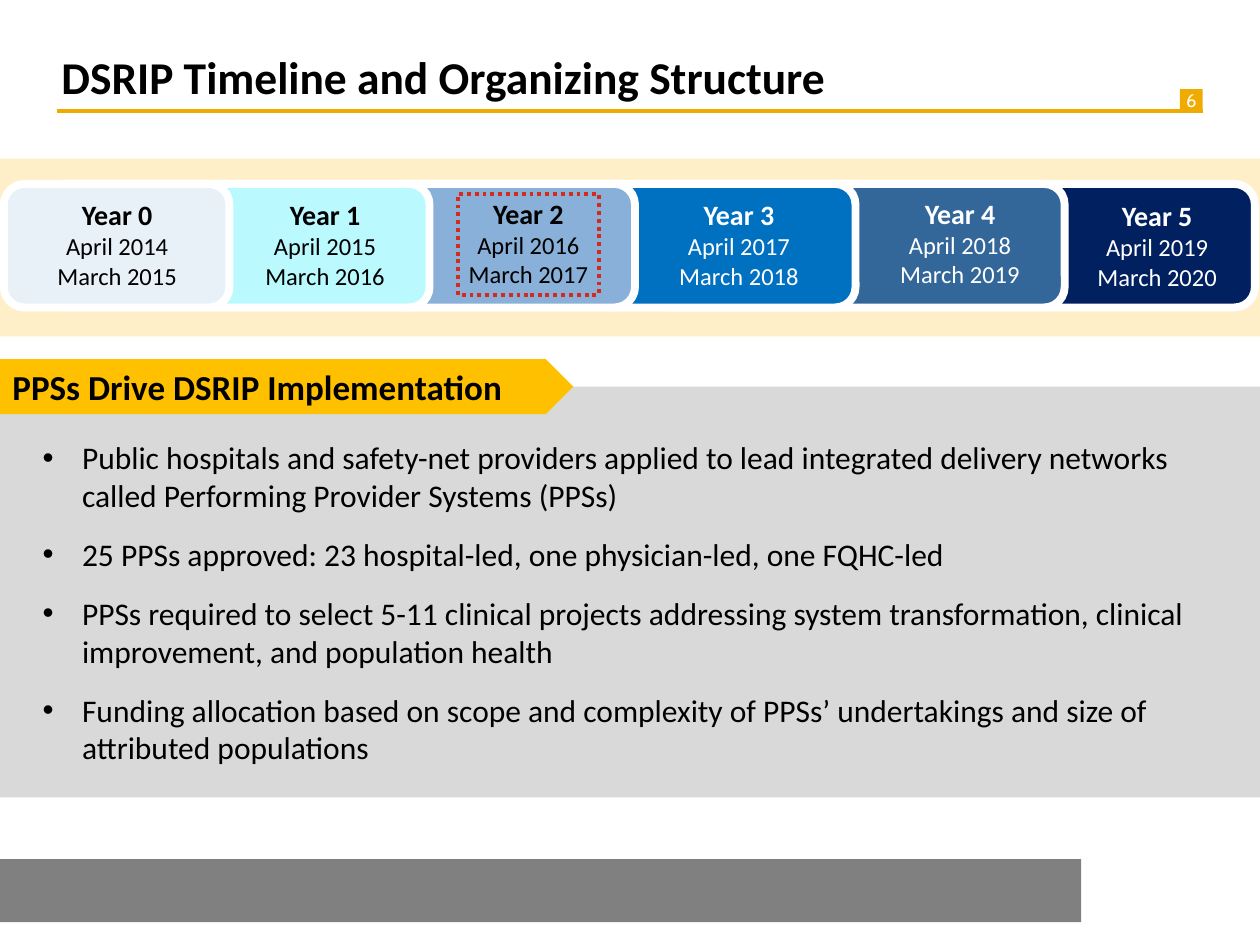
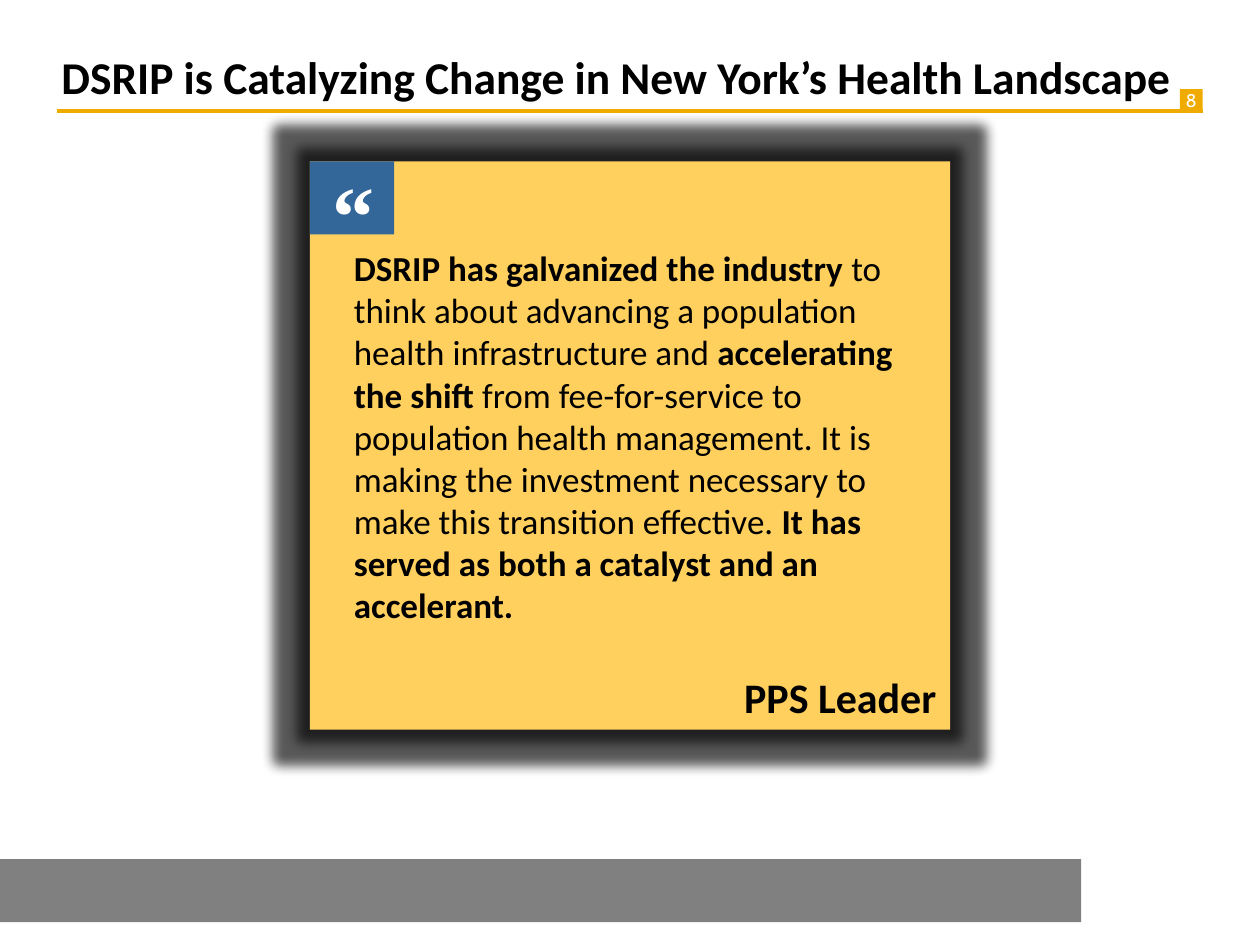
import pptx
import pptx.dml.color
import pptx.enum.dml
import pptx.enum.shapes
import pptx.enum.text
import pptx.oxml
import pptx.oxml.ns
import pptx.util
from lxml import etree

Pt = pptx.util.Pt
SHAPE = pptx.enum.shapes.MSO_SHAPE
ALIGN = pptx.enum.text.PP_ALIGN
ANCHOR = pptx.enum.text.MSO_ANCHOR

BLACK, WHITE = "000000", "FFFFFF"
AMBER, GOLD, CREAM, QUOTE_YELLOW = "F0AB00", "FFC000", "FFEFC9", "FFD05D"
FOOTER_GRAY, PANEL_GRAY, STEEL, RED = "808080", "D9D9D9", "336699", "D52B1E"

BASE = {"name": "Calibri", "bold": False}
TITLE = BASE | {"size": Pt(26), "bold": True}
BODY = BASE | {"size": Pt(18)}
YEAR = BASE | {"size": Pt(16), "bold": True}
MONTH = BASE | {"size": Pt(14)}
HEADING = BASE | {"size": Pt(20), "bold": True}
QUOTE = BASE | {"size": Pt(20)}
SPEAKER = BASE | {"size": Pt(24), "bold": True}
QUOTE_MARK = {"name": "Times New Roman", "size": Pt(48), "bold": True}
PAGE_NUMBER = {"name": "Cabin", "size": Pt(10.5)}

YEARS = [
    (2.2, 128.9, 67, 4.3, "E8F0F8", BLACK),
    (24.5, 221, 185.8, 4.3, "BAFAFF", BLACK),
    (115.2, 247.7, 302, 3.6, "88B0D8", BLACK),
    (218.9, 270, 422.3, 4.3, "0070C0", WHITE),
    (338.4, 270, 548.6, 3.6, STEEL, WHITE),
    (370.8, 346.3, 661.3, 5, "002060", WHITE),
]
BULLETS = [
    "Public hospitals and safety-net providers applied to lead integrated delivery networks called Performing Provider Systems (PPSs)",
    "25 PPSs approved: 23 hospital-led, one physician-led, one FQHC-led",
    "PPSs required to select 5-11 clinical projects addressing system transformation, clinical improvement, and population health",
    "Funding allocation based on scope and complexity of PPSs’ undertakings and size of attributed populations",
]
QUOTE_RUNS = [
    ("DSRIP has galvanized the industry ", True),
    ("to think about advancing a population health infrastructure and ", False),
    ("accelerating the shift ", True),
    ("from fee-for-service to population health management. It is making the investment necessary to make this transition effective. ", False),
    ("It has served as both a catalyst and an accelerant.", True),
]


def color(value):
    return pptx.dml.color.RGBColor.from_string(value)


def set_values(target, values):
    for name, value in values.items():
        setattr(target, name, value)


def add_effects(shape):
    return etree.SubElement(shape._element.spPr, pptx.oxml.ns.qn("a:effectLst"))


def add_box(slide, box, fill=None, line=None, width=0, kind=SHAPE.RECTANGLE):
    shape = slide.shapes.add_shape(kind, *map(Pt, box))
    shape.shadow.inherit = False
    if fill:
        shape.fill.solid()
        shape.fill.fore_color.rgb = color(fill)
    else:
        shape.fill.background()
    if line:
        shape.line.color.rgb = color(line)
        shape.line.width = Pt(width)
    else:
        shape.line.fill.background()
    return shape


def add_run(paragraph, text, font, ink=BLACK):
    run = paragraph.add_run()
    run.text = text
    set_values(run.font, font)
    run.font.color.rgb = color(ink)


def write(shape, lines, ink=BLACK, align=ALIGN.LEFT, **frame_values):
    frame = shape.text_frame
    set_values(frame, {"word_wrap": True, "vertical_anchor": ANCHOR.TOP} | frame_values)
    for index, runs in enumerate(lines):
        paragraph = frame.add_paragraph() if index else frame.paragraphs[0]
        paragraph.alignment = align
        for text, font in runs:
            add_run(paragraph, text, font, ink)
    return frame


def add_text(slide, box, lines, **options):
    return write(slide.shapes.add_textbox(*map(Pt, box)), lines, **options)


def add_page_frame(slide, title, number):
    line = slide.shapes.add_connector(
        pptx.enum.shapes.MSO_CONNECTOR.STRAIGHT, Pt(32.4), Pt(63.4), Pt(687.6), Pt(63.4))
    line.line.color.rgb = color(AMBER)
    line.line.width = Pt(2)
    add_effects(line)
    tab = add_box(slide, (674.2, 51, 13, 13), AMBER)
    write(tab, [[(number, PAGE_NUMBER)]], ink=WHITE, align=ALIGN.CENTER, word_wrap=False,
          vertical_anchor=ANCHOR.MIDDLE, margin_left=0, margin_right=0, margin_top=0, margin_bottom=0)
    add_box(slide, (0, 491, 617.8, 36), FOOTER_GRAY)
    add_text(slide, (28, 23.8, 680, 38.9), [[(title, TITLE)]], vertical_anchor=ANCHOR.BOTTOM)


def add_timeline(slide, box, current):
    left, top, width, height = box
    add_box(slide, box, CREAM)
    card_top, card_height = top + 14.4, 70.6
    for index, (card_left, card_width, center, text_drop, fill, ink) in reversed(list(enumerate(YEARS))):
        add_box(slide, (left + card_left, card_top, card_width, card_height),
                fill, WHITE, 4.5, SHAPE.ROUNDED_RECTANGLE)
        lines = [(f"Year {index}", YEAR), (f"April {2014 + index}", MONTH), (f"March {2015 + index}", MONTH)]
        add_text(slide, (left + center - 50, card_top + text_drop, 100, 60.5),
                 [[line] for line in lines], ink=ink, align=ALIGN.CENTER)
    marker = add_box(slide, (left + YEARS[current][2] - 40.4, card_top + 5.8, 80.6, 57.6), None, RED, 2.25)
    marker.line.dash_style = pptx.enum.dml.MSO_LINE.ROUND_DOT


def add_bullet_panel(slide, box, heading, bullets):
    left, top, width, height = box
    add_box(slide, box, PANEL_GRAY)
    frame = add_text(slide, (left + 17.3, top + 26, width - 35.3, 196.6),
                     [[(bullet, BODY)] for bullet in bullets])
    for index, paragraph in enumerate(frame.paragraphs):
        properties = paragraph._p.get_or_add_pPr()
        set_values(paragraph, {"space_before": Pt(6 if index else 0), "space_after": Pt(6)})
        properties.set("marL", str(Pt(22.5)))
        properties.set("indent", str(-Pt(22.5)))
        for tag, name, value in (("a:buFont", "typeface", "Arial"), ("a:buChar", "char", "•")):
            etree.SubElement(properties, pptx.oxml.ns.qn(tag)).set(name, value)
    banner = add_box(slide, (left, top - 15.8, 327.6, 31.5), GOLD, kind=SHAPE.PENTAGON)
    write(banner, [[(heading, HEADING)]])


def add_glow(shape, radius, fill, opacity):
    effects = shape._element.spPr.find(pptx.oxml.ns.qn("a:effectLst"))
    glow = etree.SubElement(effects, pptx.oxml.ns.qn("a:glow"), rad=str(Pt(radius)))
    tint = etree.SubElement(glow, pptx.oxml.ns.qn("a:srgbClr"), val=fill)
    etree.SubElement(tint, pptx.oxml.ns.qn("a:alpha"), val=str(opacity * 1000))


def add_quote_card(slide, box, quote_runs, speaker):
    left, top, width, height = box
    add_glow(add_box(slide, box, QUOTE_YELLOW), 14, BLACK, 65)
    quote = [(text, QUOTE | {"bold": bold}) for text, bold in quote_runs]
    add_text(slide, (left + 18, top + 45.4, width - 36, 225.4), [quote])
    add_box(slide, (left, top, 48.2, 41.8), STEEL)
    add_text(slide, (left + 5.8, top - 3.6, 36, 65.5), [[("“", QUOTE_MARK)]], ink=WHITE)
    add_text(slide, (left + 43.2, top + height - 36.7, width - 43.9, 36),
             [[(speaker, SPEAKER)]], align=ALIGN.RIGHT)


def main():
    presentation = pptx.Presentation()
    set_values(presentation, {"slide_width": Pt(720), "slide_height": Pt(540)})
    blank = presentation.slide_layouts[6]

    slide = presentation.slides.add_slide(blank)
    add_page_frame(slide, "DSRIP Timeline and Organizing Structure", "6")
    add_timeline(slide, (0, 90.7, 720, 101.5), 2)
    add_bullet_panel(slide, (0, 221, 720, 234.7), "PPSs Drive DSRIP Implementation", BULLETS)

    slide = presentation.slides.add_slide(blank)
    add_page_frame(slide, "DSRIP is Catalyzing Change in New York’s Health Landscape", "8")
    add_quote_card(slide, (177.1, 92.2, 365.8, 324.7), QUOTE_RUNS, "PPS Leader")

    presentation.save("out.pptx")


if __name__ == "__main__":
    main()
